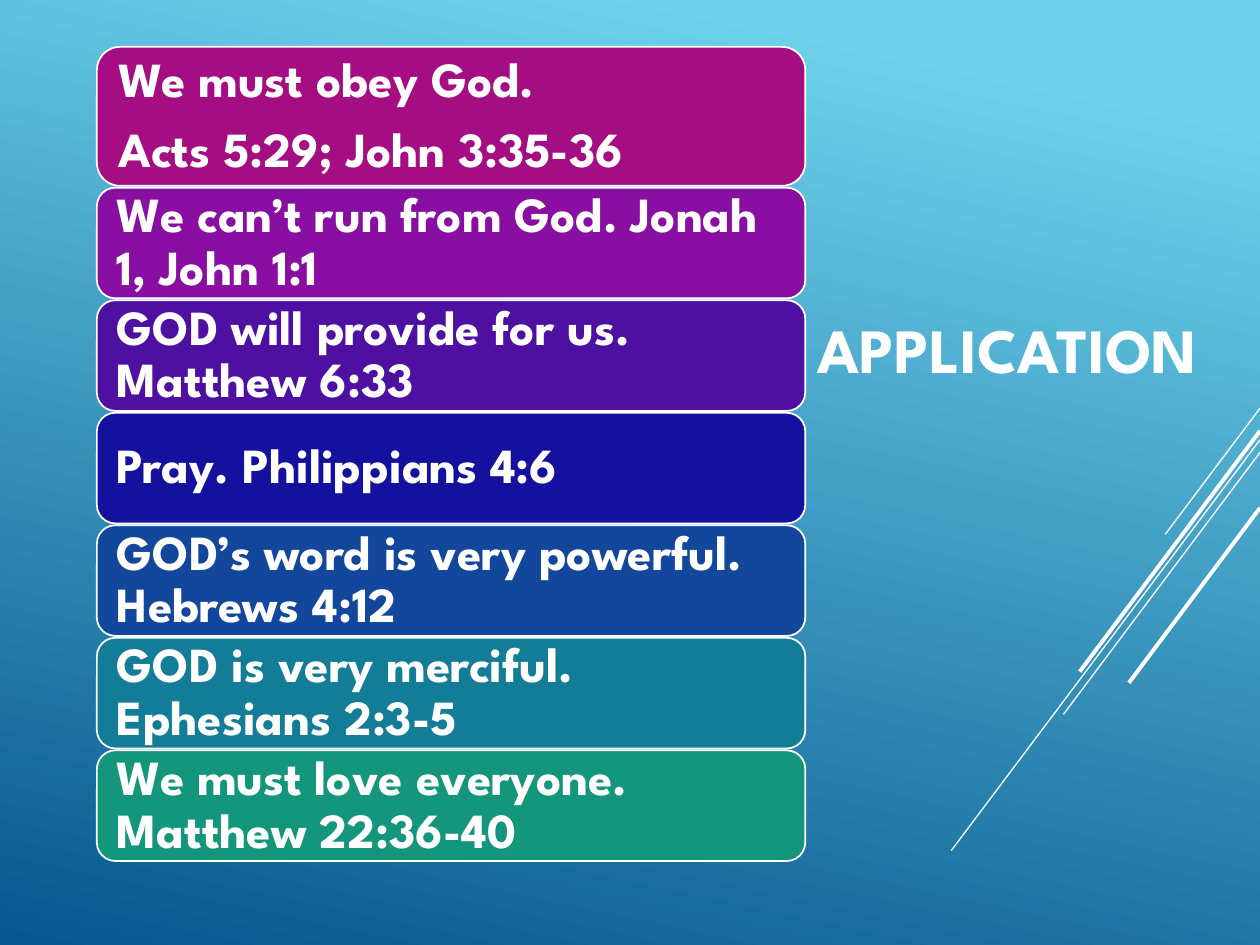
"""Build the Application slide: seven stacked lesson cards beside a title."""
from dataclasses import dataclass

from lxml.etree import SubElement
from pptx import Presentation
from pptx.dml.color import RGBColor
from pptx.enum.shapes import MSO_CONNECTOR, MSO_SHAPE
from pptx.enum.text import MSO_ANCHOR, PP_ALIGN
from pptx.oxml.ns import qn
from pptx.slide import Slide
from pptx.util import Pt

WHITE = RGBColor(0xFF, 0xFF, 0xFF)
SKY = RGBColor(0x6E, 0xD2, 0xEB)
OCEAN = RGBColor(0x06, 0x58, 0x8E)
MAGENTA = RGBColor(0xA5, 0x0E, 0x82)
PURPLE = RGBColor(0x89, 0x0F, 0xA2)
VIOLET = RGBColor(0x4D, 0x10, 0xA0)
NAVY = RGBColor(0x13, 0x11, 0x9D)
BLUE = RGBColor(0x12, 0x47, 0x9B)
TEAL = RGBColor(0x13, 0x7D, 0x98)
GREEN = RGBColor(0x14, 0x96, 0x7C)

SLIDE_WIDTH, SLIDE_HEIGHT = 720, 540
CARD_LEFT, CARD_WIDTH, CARD_GAP = 55.4, 404.8, 1.1
FIRST_CARD_TOP = 26.8

CARDS = [
    ("We must obey God.\nActs 5:29; John 3:35-36", MAGENTA, 79.4),
    ("We can’t run from God. Jonah 1, John 1:1", PURPLE, 63.2),
    ("GOD will provide for us. Matthew 6:33", VIOLET, 63.2),
    ("Pray. Philippians 4:6", NAVY, 63.2),
    ("GOD’s word is very powerful. Hebrews 4:12", BLUE, 63.2),
    ("GOD is very merciful. Ephesians 2:3-5", TEAL, 63.2),
    ("We must love everyone. Matthew 22:36-40", GREEN, 63.2),
]

STREAKS = [
    (233.3, 665.9, 305.3, 0.75),
    (251.3, 543.6, 486, 0.75),
    (258.5, 607.7, 408.2, 0.75),
    (246.2, 617, 383.8, 2.25),
    (290.2, 645.1, 390.2, 2.25),
]


@dataclass
class SlideBuilder:
    """Hold the text style and the slide being built."""

    slide: Slide
    font: str = "League Spartan"
    color: RGBColor = WHITE

    def set_text(self, shape, text, size, inset, line_spacing=1.0, space_after=0):
        """Fill a shape with left-aligned, vertically centred bold text."""
        text_frame = shape.text_frame
        text_frame.text = text
        text_frame.word_wrap = True
        text_frame.vertical_anchor = MSO_ANCHOR.MIDDLE
        text_frame.margin_left = text_frame.margin_right = Pt(inset)
        text_frame.margin_top = text_frame.margin_bottom = Pt(inset)
        for paragraph in text_frame.paragraphs:
            paragraph.alignment = PP_ALIGN.LEFT
            paragraph.line_spacing = line_spacing
            paragraph.space_after = Pt(space_after)
            for run in paragraph.runs:
                run.font.name = self.font
                run.font.size = Pt(size)
                run.font.bold = True
                run.font.color.rgb = self.color

    def backdrop(self, start, end, angle):
        """Cover the slide with a linear gradient."""
        shape = self.slide.shapes.add_shape(
            MSO_SHAPE.RECTANGLE, 0, 0, Pt(SLIDE_WIDTH), Pt(SLIDE_HEIGHT))
        shape.shadow.inherit = False
        shape.line.fill.background()
        shape.fill.gradient()
        shape.fill.gradient_angle = angle
        stops = shape.fill.gradient_stops
        for stop, position, color in zip(stops, (0.1, 1), (start, end)):
            stop.position = position
            stop.color.rgb = color

    def streak(self, start_y, end_x, end_y, width):
        """Draw a diagonal line inward from the right edge."""
        connector = self.slide.shapes.add_connector(
            MSO_CONNECTOR.STRAIGHT,
            Pt(SLIDE_WIDTH), Pt(start_y), Pt(end_x), Pt(end_y))
        connector.line.color.rgb = self.color
        connector.line.width = Pt(width)
        SubElement(connector._element.spPr, qn("a:effectLst"))

    def title(self, text, left, top, width, height):
        """Add the slide title."""
        shape = self.slide.shapes.add_textbox(
            Pt(left), Pt(top), Pt(width), Pt(height))
        self.set_text(shape, text, size=36, inset=7.2, line_spacing=0.9)

    def card(self, text, color, top, height):
        """Add a rounded lesson card."""
        shape = self.slide.shapes.add_shape(
            MSO_SHAPE.ROUNDED_RECTANGLE,
            Pt(CARD_LEFT), Pt(top), Pt(CARD_WIDTH), Pt(height))
        shape.shadow.inherit = False
        shape.fill.solid()
        shape.fill.fore_color.rgb = color
        shape.line.color.rgb = self.color
        shape.line.width = Pt(1)
        self.set_text(shape, text, size=28, inset=8.4,
                      line_spacing=0.9, space_after=9.8)


def main():
    """Build and save the presentation."""
    presentation = Presentation()
    presentation.slide_width = Pt(SLIDE_WIDTH)
    presentation.slide_height = Pt(SLIDE_HEIGHT)
    slide = presentation.slides.add_slide(presentation.slide_layouts[6])
    builder = SlideBuilder(slide)

    builder.backdrop(SKY, OCEAN, angle=258)
    for streak in STREAKS:
        builder.streak(*streak)
    builder.title("APPLICATION", 460, 74.2, 259.2, 255.6)

    top = FIRST_CARD_TOP
    for text, color, height in CARDS:
        builder.card(text, color, top, height)
        top += height + CARD_GAP

    presentation.save("out.pptx")


if __name__ == "__main__":
    main()
